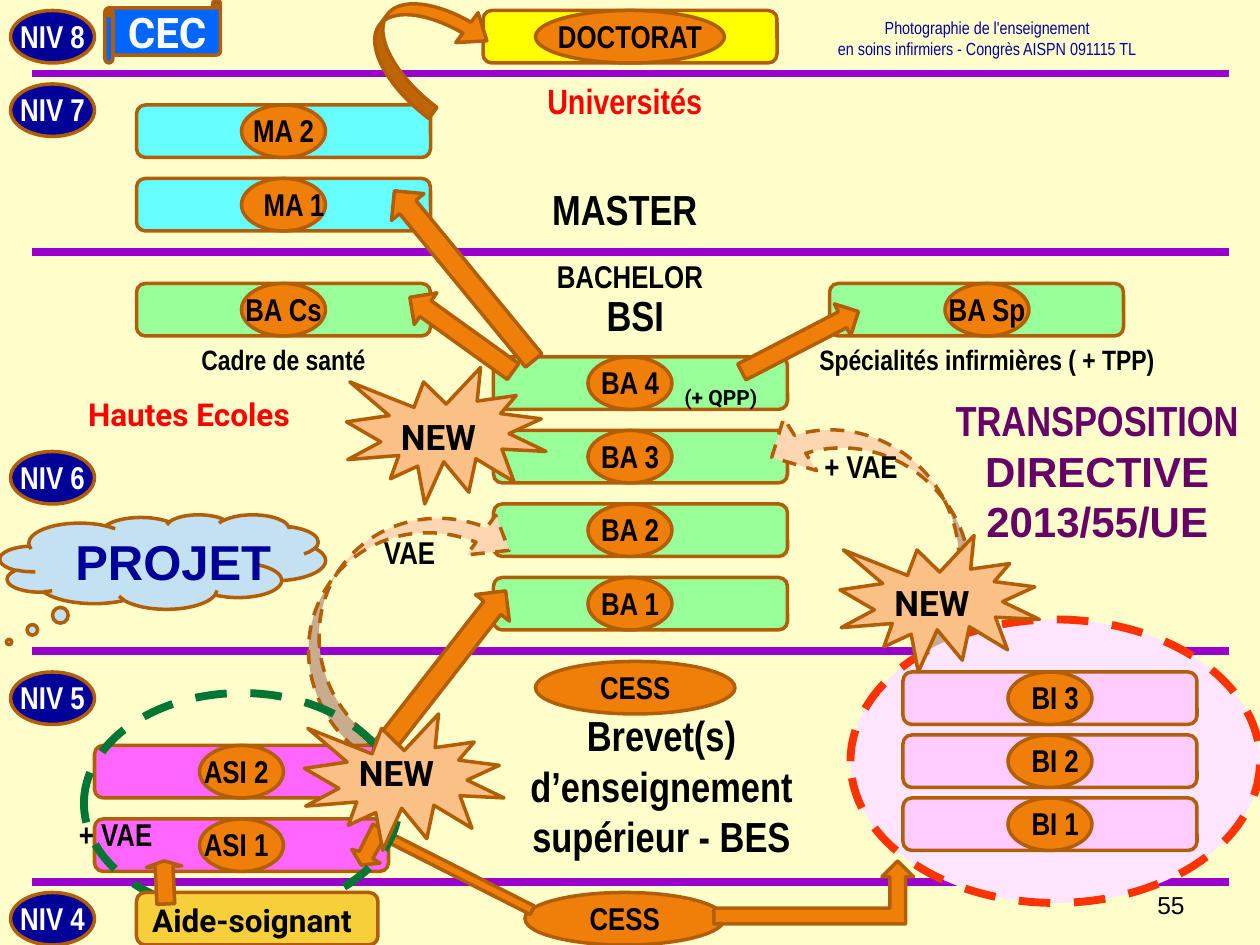
from dataclasses import dataclass
from typing import Any

from pptx import Presentation
from pptx.dml.color import RGBColor
from pptx.enum.dml import MSO_LINE
from pptx.enum.shapes import MSO_CONNECTOR, MSO_SHAPE
from pptx.enum.text import MSO_ANCHOR, PP_ALIGN
from pptx.oxml.ns import qn
from pptx.oxml.xmlchemy import OxmlElement
from pptx.util import Pt

SCALE = 7620


@dataclass(frozen=True)
class Theme:
    background: str = "FFFFCC"
    rule: str = "9900CC"
    outline: str = "B25E07"
    orange: str = "F07F09"
    pale_orange: str = "FCD7B2"
    seal: str = "FBC085"
    navy: str = "000099"
    green: str = "99FF99"
    cyan: str = "66FFFF"
    magenta: str = "FF66FF"
    pink: str = "FFCCFF"
    pale_pink: str = "FFE5FF"
    yellow: str = "FFFF00"
    gold: str = "F7CF3B"
    blue: str = "0066FF"
    cloud: str = "C4E1F2"
    red: str = "FF0000"
    red_ring: str = "FF3300"
    green_ring: str = "007635"
    purple: str = "660066"
    black: str = "000000"
    white: str = "FFFFFF"
    narrow: str = "Arial Narrow"
    sans: str = "Arial"
    display: str = "Roboto"
    credit: int = 10
    note: int = 12
    number: int = 14
    caption: int = 16
    label: int = 18
    accent: int = 20
    heading: int = 24
    project: int = 28
    thin: int = 2
    thick: float = 4.5


THEME = Theme()


@dataclass(frozen=True)
class Region:
    slide: Any
    left: int
    top: int

    def place(self, left, top, width, height):
        return [value * SCALE for value in (self.left + left, self.top + top, width, height)]


def paint(shape, fill, line=THEME.outline, width=THEME.thin, dashed=False):
    shape.shadow.inherit = False
    if fill:
        shape.fill.solid()
        shape.fill.fore_color.rgb = RGBColor.from_string(fill)
    else:
        shape.fill.background()
    shape.line.color.rgb = RGBColor.from_string(line)
    shape.line.width = Pt(width)
    if dashed:
        shape.line.dash_style = MSO_LINE.DASH


def add_shape(region, kind, box, fill, rotation=0, flipped=False, adjustments=(), **line):
    shape = region.slide.shapes.add_shape(kind, *region.place(*box))
    paint(shape, fill, **line)
    shape.rotation = rotation
    if flipped:
        shape.element.spPr.find(qn("a:xfrm")).set("flipV", "1")
    for index, value in enumerate(adjustments):
        shape.adjustments[index] = value
    return shape


def add_run(paragraph, text, size, font, color, bold):
    run = paragraph.add_run()
    run.text = text
    run.font.size = Pt(size)
    run.font.name = font
    run.font.bold = bold
    run.font.color.rgb = RGBColor.from_string(color)


def add_text(region, text, box, size=THEME.label, font=THEME.narrow, color=THEME.black,
             bold=True, align=PP_ALIGN.CENTER, anchor=MSO_ANCHOR.TOP):
    frame = region.slide.shapes.add_textbox(*region.place(*box)).text_frame
    frame.word_wrap = True
    frame.vertical_anchor = anchor
    for index, line in enumerate(text.split("\n")):
        paragraph = frame.add_paragraph() if index else frame.paragraphs[0]
        paragraph.alignment = align
        add_run(paragraph, line, size, font, color, bold)
    return frame


def add_rule(region, top):
    left, y, width, _ = region.place(30, top, 1140, 0)
    rule = region.slide.shapes.add_connector(MSO_CONNECTOR.STRAIGHT, left, y, left + width, y)
    rule.line.color.rgb = RGBColor.from_string(THEME.rule)
    rule.line.width = Pt(THEME.thick)
    rule.element.spPr.append(OxmlElement("a:effectLst"))


def add_bar(region, label, left, top, fill, oval_offset=100, oval_width=80,
            text_offset=90, text_width=100):
    add_shape(region, MSO_SHAPE.ROUNDED_RECTANGLE, (left, top, 280, 50), fill)
    add_shape(region, MSO_SHAPE.OVAL, (left + oval_offset, top, oval_width, 50), THEME.orange)
    add_text(region, label, (left + text_offset, top, text_width, 48))


def add_seal(region, left, top, text_top):
    add_shape(region, MSO_SHAPE.EXPLOSION1, (left, top, 190, 130), THEME.seal)
    add_text(region, "NEW", (left + 40, top + text_top, 120, 53), size=THEME.accent,
             font=THEME.display, align=PP_ALIGN.LEFT)


def add_cess(region, left, top):
    add_shape(region, MSO_SHAPE.OVAL, (left, top, 190, 50), THEME.orange)
    add_text(region, "CESS", (left, top, 190, 48))


def build_levels(region):
    for top in (70, 240, 620, 840):
        add_rule(region, top)
    for level, top in ((8, 10), (7, 80), (6, 430), (5, 640), (4, 850)):
        add_shape(region, MSO_SHAPE.OVAL, (10, top, 80, 50), THEME.navy)
        add_text(region, f"NIV {level}", (0, top, 100, 48), color=THEME.white)


def build_doctorate(region):
    add_shape(region, MSO_SHAPE.HORIZONTAL_SCROLL, (0, 0, 110, 60), THEME.blue)
    add_text(region, "CEC", (10, 0, 130, 61), size=THEME.heading, font=THEME.display,
             color=THEME.white, align=PP_ALIGN.LEFT)
    add_bar(region, "DOCTORAT", 360, 10, THEME.yellow, 50, 180, 40, 200)
    add_text(region, "Universités", (300, 70, 390, 53), size=THEME.accent, color=THEME.red)
    add_text(region, "Photographie de l'enseignement\nen soins infirmiers - Congrès AISPN 091115 TL",
             (670, 0, 340, 62), size=THEME.credit, color=THEME.navy, bold=False,
             anchor=MSO_ANCHOR.BOTTOM)


def build_master(region):
    add_bar(region, "MA 2", 0, 0, THEME.cyan)
    add_bar(region, "MA 1", 0, 70, THEME.cyan, text_offset=100)
    add_text(region, "MASTER", (360, 69, 210, 61), size=THEME.heading)
    add_shape(region, MSO_SHAPE.CURVED_UP_ARROW, (220, -104, 110, 91), THEME.orange,
              rotation=306.8, flipped=True, adjustments=(0.142, 0.39, 0.25))


def build_bachelor(region):
    for index, year in enumerate((4, 3, 2, 1)):
        add_bar(region, f"BA {year}", 470, 100 + 70 * index, THEME.green, 90, text_offset=80)
    add_bar(region, "BA Cs", 130, 30, THEME.green)
    add_bar(region, "BA Sp", 790, 30, THEME.green, 110, text_offset=100)
    add_shape(region, MSO_SHAPE.CURVED_UP_ARROW, (242, 276, 262, 120), THEME.pale_orange,
              rotation=306, flipped=True, adjustments=(0.142, 0.39, 0.25), dashed=True)
    add_shape(region, MSO_SHAPE.CURVED_UP_ARROW, (703, 200, 283, 118), THEME.pale_orange,
              rotation=237.9, adjustments=(0.172, 0.5, 0.25), dashed=True)
    for box, rotation in (((398, 301, 41, 205), 38), ((421, 18, 37, 121), 305.7),
                          ((745, 23, 34, 125), 62.6), ((422, -82, 40, 209), 320.6)):
        add_shape(region, MSO_SHAPE.UP_ARROW, box, THEME.orange, rotation=rotation)
    add_seal(region, 330, 110, 40)
    add_text(region, "BACHELOR", (500, -1, 200, 48))
    add_text(region, "BSI", (530, 30, 150, 61), size=THEME.heading)
    add_text(region, "Cadre de santé", (130, 80, 280, 44), size=THEME.caption)
    add_text(region, "Spécialités infirmières ( + TPP)", (740, 80, 400, 44), size=THEME.caption)
    add_text(region, "(+ QPP)", (640, 120, 110, 36), size=THEME.note, font=THEME.display,
             align=PP_ALIGN.LEFT)
    add_text(region, "Hautes Ecoles", (60, 130, 240, 48), font=THEME.display, color=THEME.red)
    add_text(region, "VAE", (340, 262, 100, 68))
    add_text(region, "+ VAE", (770, 180, 100, 68))
    add_shape(region, MSO_SHAPE.CLOUD_CALLOUT, (0, 250, 310, 90), THEME.cloud,
              adjustments=(-0.472, 0.85))
    add_text(region, "PROJET", (60, 260, 230, 68), size=THEME.project, font=THEME.sans,
             color=THEME.navy, align=PP_ALIGN.LEFT)
    directive = add_text(region, "TRANSPOSITION ", (890, 130, 310, 157), size=THEME.heading,
                         color=THEME.purple)
    add_run(directive.paragraphs[0], "DIRECTIVE 2013/55/UE", THEME.heading, THEME.sans,
            THEME.purple, True)


def build_brevet(region):
    for index, year in enumerate((2, 1)):
        add_bar(region, f"ASI {year}", 90, 90 + 70 * index, THEME.magenta, text_offset=80,
                text_width=110)
    add_text(region, "Brevet(s)\nd’enseignement\nsupérieur - BES", (440, 50, 380, 157),
             size=THEME.heading)
    add_cess(region, 510, 10)
    add_cess(region, 500, 230)
    add_shape(region, MSO_SHAPE.BENT_UP_ARROW, (680, 200, 190, 60), THEME.orange)
    outline = region.slide.shapes.build_freeform(505, 251, scale=SCALE)
    outline.add_line_segments([(365, 180), (355, 198), (362, 202), (344, 204), (335, 189),
                               (342, 191), (355, 165), (509, 243)], close=True)
    paint(outline.convert_to_shape(*region.place(0, 0, 0, 0)[:2]), THEME.orange)
    add_shape(region, MSO_SHAPE.OVAL, (810, -30, 390, 270), THEME.pale_pink,
              line=THEME.red_ring, width=THEME.thick, dashed=True)
    add_shape(region, MSO_SHAPE.OVAL, (80, 40, 300, 210), None,
              line=THEME.green_ring, width=THEME.thick, dashed=True)
    for index, year in enumerate((3, 2, 1)):
        add_bar(region, f"BI {year}", 860, 20 + 60 * index, THEME.pink, text_width=110)
    add_seal(region, 290, 60, 30)
    add_seal(region, 800, -110, 38)
    add_shape(region, MSO_SHAPE.ROUNDED_RECTANGLE, (130, 230, 230, 50), THEME.gold)
    add_text(region, "Aide-soignant", (120, 232, 240, 48), font=THEME.display)
    add_shape(region, MSO_SHAPE.UP_ARROW, (140, 200, 34, 41), THEME.orange, rotation=357.4,
              adjustments=(0.5, 0.162))
    add_text(region, "+ VAE", (60, 150, 100, 48))
    add_text(region, "55", (860, 200, 280, 62), size=THEME.number, font=THEME.sans, bold=False,
             align=PP_ALIGN.RIGHT, anchor=MSO_ANCHOR.BOTTOM)


def main():
    presentation = Presentation()
    presentation.slide_width = 1200 * SCALE
    presentation.slide_height = 900 * SCALE
    slide = presentation.slides.add_slide(presentation.slide_layouts[6])
    slide.background.fill.solid()
    slide.background.fill.fore_color.rgb = RGBColor.from_string(THEME.background)
    build_levels(Region(slide, 0, 0))
    build_doctorate(Region(slide, 100, 0))
    build_master(Region(slide, 130, 100))
    build_bachelor(Region(slide, 0, 240))
    build_brevet(Region(slide, 0, 620))
    presentation.save("out.pptx")


if __name__ == "__main__":
    main()
